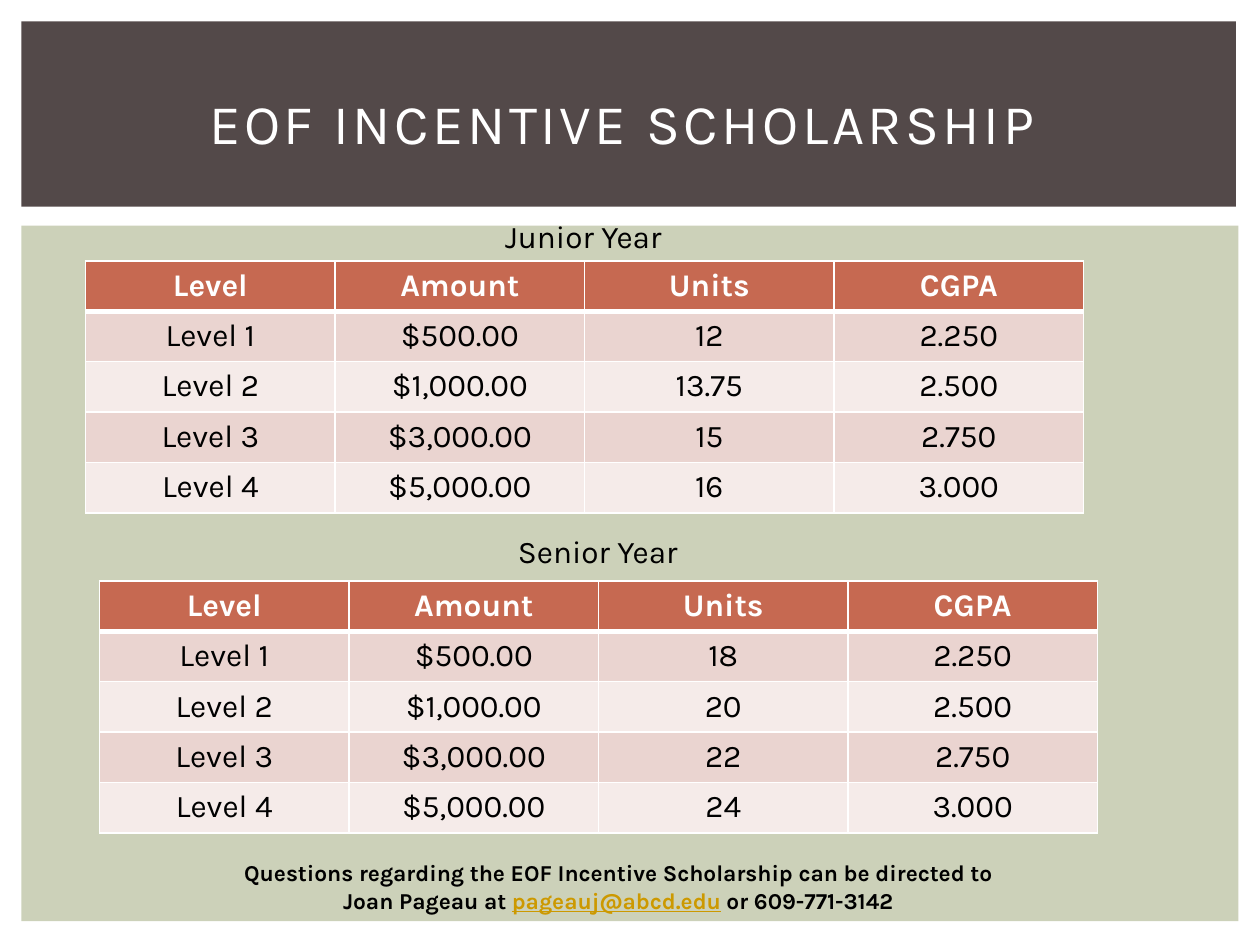
from dataclasses import dataclass

from lxml import etree
from pptx import Presentation
from pptx.dml.color import RGBColor
from pptx.enum.shapes import MSO_SHAPE
from pptx.enum.text import MSO_ANCHOR, PP_ALIGN
from pptx.oxml.ns import qn
from pptx.util import Inches, Pt

RECTANGLE = MSO_SHAPE.RECTANGLE
MIDDLE = MSO_ANCHOR.MIDDLE
TOP = MSO_ANCHOR.TOP
CENTER = PP_ALIGN.CENTER

WHITE = RGBColor(0xFF, 0xFF, 0xFF)
BLACK = RGBColor(0x00, 0x00, 0x00)
BROWN = RGBColor(0x53, 0x49, 0x49)
SAGE = RGBColor(0xCC, 0xD1, 0xB9)
RUST = RGBColor(0xC6, 0x69, 0x51)
BAND_DARK = RGBColor(0xEA, 0xD4, 0xD0)
BAND_LIGHT = RGBColor(0xF5, 0xEB, 0xE9)
GOLD = RGBColor(0xCC, 0x99, 0x00)

FONT = "Karla"
TITLE_ONLY = 5
COLUMN_WIDTH = 1.98
HEADER_HEIGHT = 0.39
HEADINGS = ("Level", "Amount", "Units", "CGPA")
AMOUNTS = ("$500.00", "$1,000.00", "$3,000.00", "$5,000.00")
AVERAGES = ("2.250", "2.500", "2.750", "3.000")


@dataclass
class Box:
    left: float
    top: float
    width: float
    height: float

    def lengths(self) -> tuple:
        return tuple(map(Inches, (self.left, self.top, self.width, self.height)))


@dataclass
class YearTable:
    caption: str
    caption_box: Box
    left: float
    top: float
    row_height: float
    units: tuple

    def rows(self) -> list:
        levels = [f"Level {number}" for number in range(1, len(AMOUNTS) + 1)]
        return [HEADINGS, *zip(levels, AMOUNTS, self.units, AVERAGES)]


YEARS = (
    YearTable("Junior Year", Box(3.09, 1.67, 3.08, 0.4),
              0.68, 2.07, 0.39, ("12", "13.75", "15", "16")),
    YearTable("Senior Year", Box(3.66, 4.17, 2.17, 0.4),
              0.79, 4.61, 0.4, ("18", "20", "22", "24")),
)


def add_band(slide, box: Box, color: RGBColor) -> None:
    band = slide.shapes.add_shape(RECTANGLE, *box.lengths())
    band.shadow.inherit = False
    band.fill.solid()
    band.fill.fore_color.rgb = color
    band.line.fill.background()


def format_paragraph(para, size: float, color: RGBColor, bold: bool = False) -> None:
    para.alignment = CENTER
    para.font.name = FONT
    para.font.size = Pt(size)
    para.font.bold = bold
    para.font.color.rgb = color


def add_text_box(slide, box: Box):
    frame = slide.shapes.add_textbox(*box.lengths()).text_frame
    frame.word_wrap = True
    frame.vertical_anchor = TOP
    return frame


def add_borders(cell, top: float, bottom: float) -> None:
    properties = cell._tc.get_or_add_tcPr()
    for side, width in (("L", 1), ("R", 1), ("T", top), ("B", bottom)):
        line = etree.SubElement(properties, qn(f"a:ln{side}"), w=str(Pt(width)))
        fill = etree.SubElement(line, qn("a:solidFill"))
        etree.SubElement(fill, qn("a:srgbClr"), val=str(WHITE))


def add_year(slide, year: YearTable) -> None:
    caption = add_text_box(slide, year.caption_box).paragraphs[0]
    caption.text = year.caption
    format_paragraph(caption, 18, BLACK)

    rows = year.rows()
    height = HEADER_HEIGHT + year.row_height * (len(rows) - 1)
    box = Box(year.left, year.top, COLUMN_WIDTH * len(HEADINGS), height)
    table = slide.shapes.add_table(len(rows), len(HEADINGS), *box.lengths()).table
    for column in table.columns:
        column.width = Inches(COLUMN_WIDTH)
    for index, values in enumerate(rows):
        header = index == 0
        table.rows[index].height = Inches(HEADER_HEIGHT if header else year.row_height)
        band = BAND_DARK if index % 2 else BAND_LIGHT
        for cell, value in zip(table.rows[index].cells, values):
            add_borders(cell, 3 if index == 1 else 1, 3 if header else 1)
            cell.fill.solid()
            cell.fill.fore_color.rgb = RUST if header else band
            cell.text = value
            format_paragraph(cell.text_frame.paragraphs[0], 18,
                             WHITE if header else BLACK, header)


def add_title(slide, text: str, box: Box) -> None:
    title = slide.shapes.title
    title.left, title.top, title.width, title.height = box.lengths()
    frame = title.text_frame
    frame.word_wrap = True
    frame.vertical_anchor = MIDDLE
    para = frame.paragraphs[0]
    para.text = text
    format_paragraph(para, 32, WHITE)
    para.runs[0].font._element.set("spc", "200")
    # Bring the title in front of the bands
    title.element.getparent().append(title.element)


def add_contact(slide, box: Box) -> None:
    frame = add_text_box(slide, box)
    question = frame.paragraphs[0]
    question.text = "Questions regarding the EOF Incentive Scholarship can be directed to"
    contact = frame.add_paragraph()
    for text in ("Joan Pageau at ", "pageauj@abcd.edu", " or 609-771-3142"):
        span = contact.add_run()
        span.text = text
        if "@" in text:
            span.font.underline = True
            span.font.color.rgb = GOLD
    for para in frame.paragraphs:
        format_paragraph(para, 13, BLACK, True)
        para.line_spacing = Pt(16)


def main() -> None:
    deck = Presentation()
    deck.slide_width, deck.slide_height = Inches(10), Inches(7.5)
    slide = deck.slides.add_slide(deck.slide_layouts[TITLE_ONLY])

    # Background bands and title
    add_band(slide, Box(0.17, 1.79, 9.66, 5.52), SAGE)
    add_band(slide, Box(0.17, 0.17, 9.64, 1.47), BROWN)
    add_title(slide, "EOF INCENTIVE SCHOLARSHIP ", Box(0.42, 0.39, 9.17, 1.15))

    # Scholarship tables
    for year in YEARS:
        add_year(slide, year)

    # Contact line
    add_contact(slide, Box(0.74, 6.76, 8.33, 0.54))
    deck.save("out.pptx")


if __name__ == "__main__":
    main()
